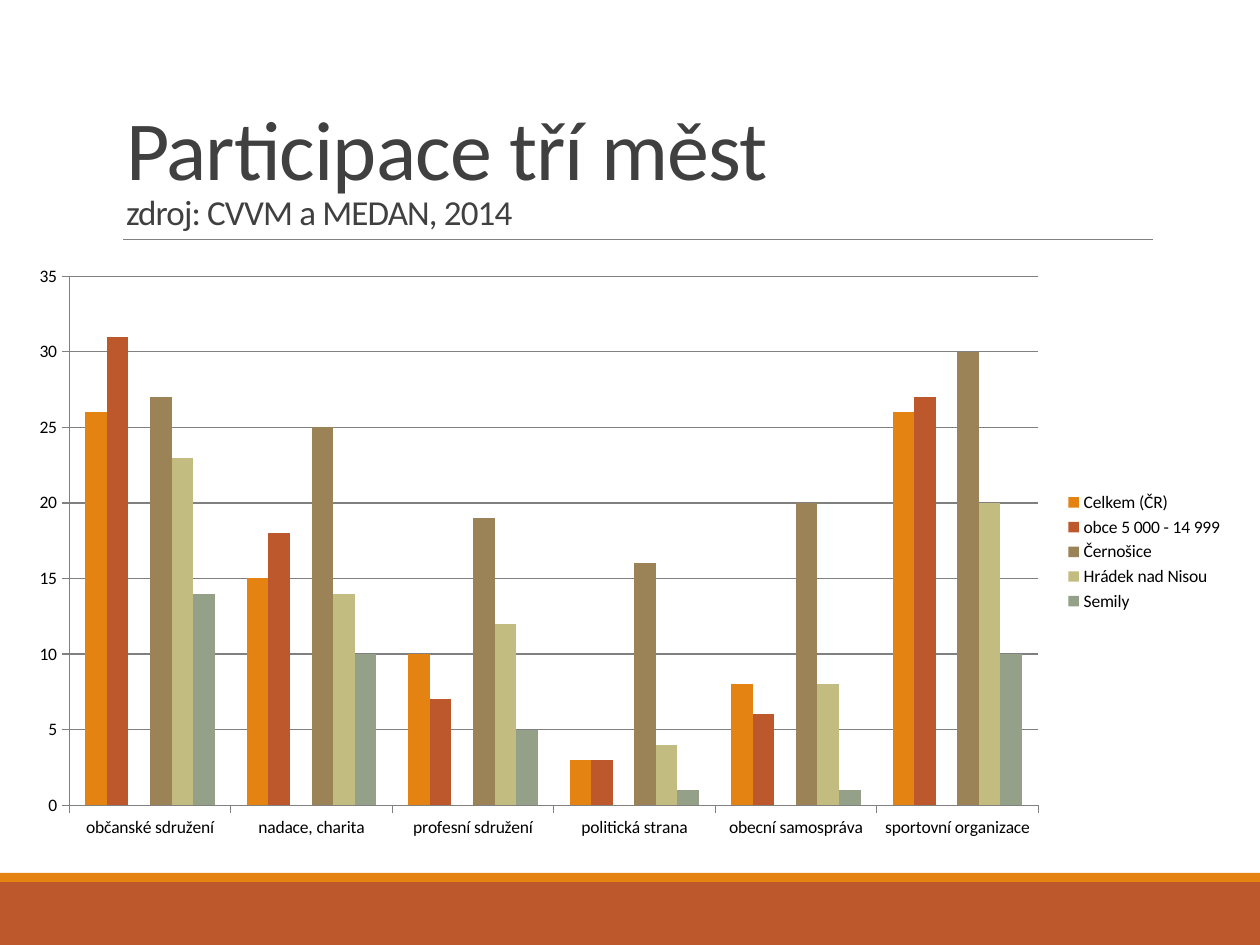
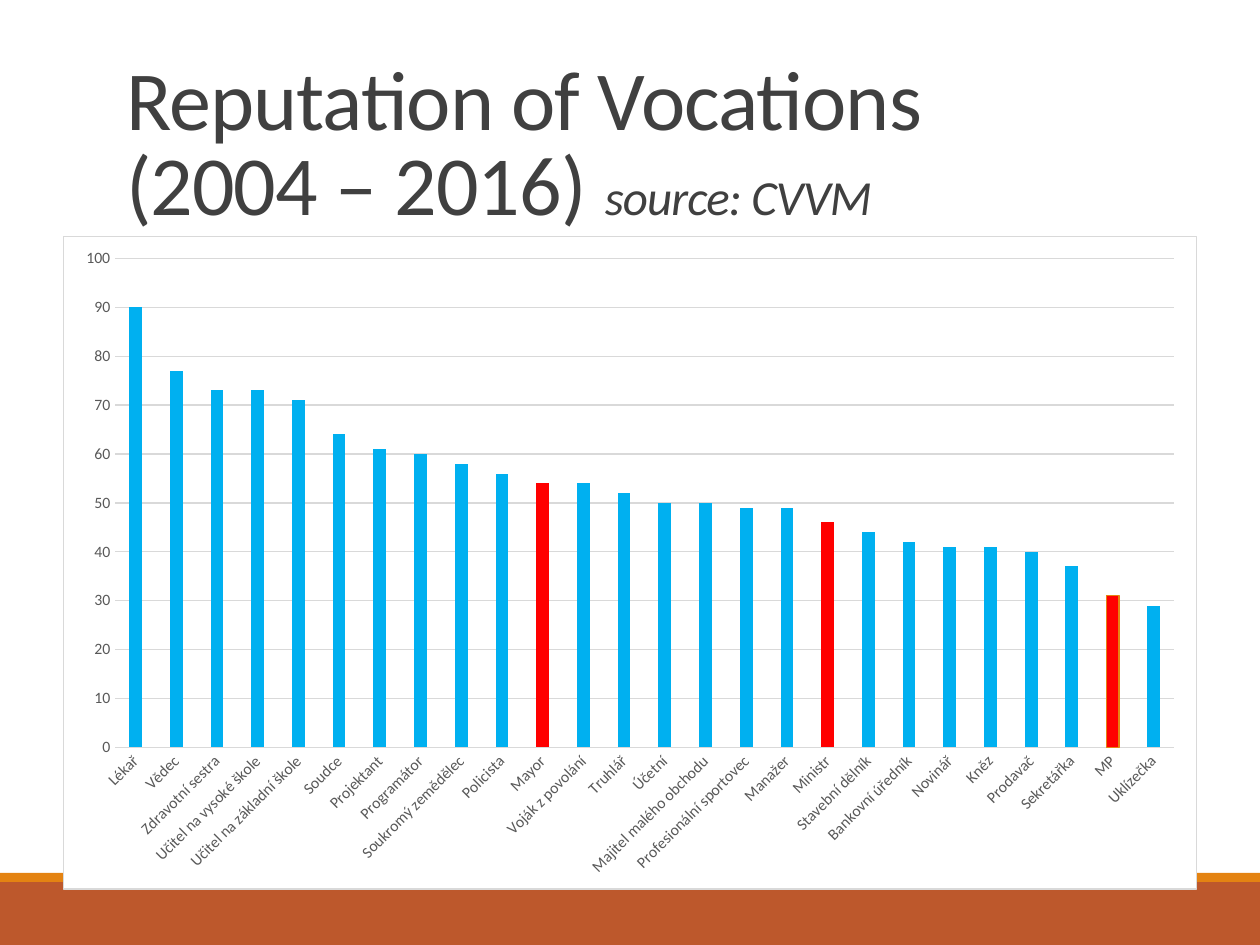
import lxml.etree
import pptx
import pptx.chart.data
import pptx.dml.color
import pptx.enum.chart
import pptx.enum.shapes
import pptx.enum.text
import pptx.oxml.ns
import pptx.util

Pt = pptx.util.Pt
qn = pptx.oxml.ns.qn
XL = pptx.enum.chart

FONT = "Calibri"
ORANGE, RUST = "E48312", "BD582C"
TITLE, RULE, GRID, LABEL = "404040", "808080", "D9D9D9", "595959"
SKY, RED, BLACK, WHITE = "00B0F0", "FF0000", "000000", "FFFFFF"


def rgb(color):
    return pptx.dml.color.RGBColor.from_string(color)


def paint(fmt, fill=None, line=None, width=0.75):
    if fill:
        fmt.fill.solid()
        fmt.fill.fore_color.rgb = rgb(fill)
    if line:
        fmt.line.color.rgb = rgb(line)
        fmt.line.width = Pt(width)
    else:
        fmt.line.fill.background()


prs = pptx.Presentation()
prs.slide_width, prs.slide_height = Pt(720), Pt(540)

titles = [
    [[("Participace tří měst", 48, False)],
     [("zdroj: CVVM a MEDAN, 2014", 20, False)]],
    [[("Reputation of Vocations", 48, False)],
     [("(2004 – 2016) ", 48, False), ("source: CVVM", 28, True)]],
]

participation = pptx.chart.data.CategoryChartData()
participation.categories = [
    "občanské sdružení", "nadace, charita", "profesní sdružení",
    "politická strana", "obecní samospráva", "sportovní organizace"]
cities = [
    ("Celkem (ČR)", [26, 15, 10, 3, 8, 26], ORANGE),
    ("obce 5 000 - 14 999", [31, 18, 7, 3, 6, 27], RUST),
    ("Series 3", [None] * 6, "865640"),
    ("Černošice", [27, 25, 19, 16, 20, 30], "9B8357"),
    ("Hrádek nad Nisou", [23, 14, 12, 4, 8, 20], "C2BC80"),
    ("Semily", [14, 10, 5, 1, 1, 10], "94A088"),
]
for name, values, color in cities:
    participation.add_series(name, values)

vocations = [
    ("Lékař", 90), ("Vědec", 77), ("Zdravotní sestra", 73),
    ("Učitel na vysoké škole", 73), ("Učitel na základní škole", 71),
    ("Soudce", 64), ("Projektant", 61), ("Programátor", 60),
    ("Soukromý zemědělec", 58), ("Policista", 56), ("Mayor", 54),
    ("Voják z povolání", 54), ("Truhlář", 52), ("Účetní", 50),
    ("Majitel malého obchodu", 50), ("Profesionální sportovec", 49),
    ("Manažer", 49), ("Ministr", 46), ("Stavební dělník", 44),
    ("Bankovní úředník", 42), ("Novinář", 41), ("Kněz", 41),
    ("Prodavač", 40), ("Sekretářka", 37), ("MP", 31), ("Uklízečka", 29)]
reputation = pptx.chart.data.CategoryChartData()
reputation.categories = [name for name, value in vocations]
reputation.add_series("Series 1", [value for name, value in vocations])

chart_specs = [
    dict(data=participation, box=(8.64, 145.44, 697.68, 339.84),
         colors=[color for name, values, color in cities],
         gap=150, overlap=0, top=35, step=5, size=10, text=BLACK,
         grid=RULE, axis=RULE, value_line=RULE, tick=XL.XL_TICK_MARK.OUTSIDE),
    dict(data=reputation, box=(36, 134.64, 648, 373.68), colors=[SKY],
         gap=219, overlap=-27, top=100, step=10, size=9, text=LABEL,
         grid=GRID, axis=GRID, value_line=None, tick=XL.XL_TICK_MARK.NONE),
]

charts = []
for lines, c in zip(titles, chart_specs):
    s = prs.slides.add_slide(prs.slide_layouts[5])

    for top, height, color in [(504, 36, RUST), (498.8, 5.2, ORANGE)]:
        sp = s.shapes.add_shape(pptx.enum.shapes.MSO_SHAPE.RECTANGLE,
                                0, Pt(top), prs.slide_width, Pt(height))
        sp.shadow.inherit = False
        paint(sp, color)
    rule = s.shapes.add_connector(pptx.enum.shapes.MSO_CONNECTOR.STRAIGHT,
                                  Pt(70.5), Pt(136.8), Pt(658.8), Pt(136.8))
    rule.line.color.rgb = rgb(RULE)
    rule.line.width = Pt(0.5)
    lxml.etree.SubElement(rule._element.spPr, qn("a:effectLst"))

    title = s.shapes.title
    title.left, title.top = Pt(64.8), Pt(22.3)
    title.width, title.height = Pt(594), Pt(114.5)
    tf = title.text_frame
    tf.auto_size = pptx.enum.text.MSO_AUTO_SIZE.NONE
    tf.word_wrap = True
    tf.vertical_anchor = pptx.enum.text.MSO_ANCHOR.BOTTOM
    p = tf.paragraphs[0]
    p.alignment = pptx.enum.text.PP_ALIGN.LEFT
    p.line_spacing = 0.85
    for i, line in enumerate(lines):
        if i:
            p.add_line_break()
        for text, size, italic in line:
            r = p.add_run()
            r.text = text
            r.font.name, r.font.size = FONT, Pt(size)
            r.font.color.rgb = rgb(TITLE)
            if italic:
                r.font.italic = True
            r._r.get_or_add_rPr().set("spc", "-50")

    chart = s.shapes.add_chart(XL.XL_CHART_TYPE.COLUMN_CLUSTERED,
                               *[Pt(v) for v in c["box"]], c["data"]).chart
    charts.append(chart)
    chart.has_title = chart.has_legend = False
    chart.font.name, chart.font.size = FONT, Pt(10)
    chart.font.color.rgb = rgb(BLACK)

    plot = chart.plots[0]
    plot.vary_by_categories = False
    plot.gap_width, plot.overlap = c["gap"], c["overlap"]
    for series, color in zip(plot.series, c["colors"]):
        series.invert_if_negative = False
        paint(series.format, color)

    cat, val = chart.category_axis, chart.value_axis
    for axis, color in [(cat, c["axis"]), (val, c["value_line"])]:
        axis.major_tick_mark = c["tick"]
        axis.minor_tick_mark = XL.XL_TICK_MARK.NONE
        font = axis.tick_labels.font
        font.name, font.size = FONT, Pt(c["size"])
        font.color.rgb = rgb(c["text"])
        paint(axis.format, line=color)
    val.minimum_scale, val.maximum_scale = 0, c["top"]
    val.major_unit = c["step"]
    val.tick_labels.number_format = "0"
    val.tick_labels.number_format_is_linked = False
    val.has_major_gridlines = True
    paint(val.major_gridlines.format, line=c["grid"])

city_chart, vocation_chart = charts

city_chart.has_legend = True
legend = city_chart.legend
legend.position = XL.XL_LEGEND_POSITION.RIGHT
legend.include_in_layout = False
entry = lxml.etree.Element(qn("c:legendEntry"))
lxml.etree.SubElement(entry, qn("c:idx")).set("val", "2")
lxml.etree.SubElement(entry, qn("c:delete")).set("val", "1")
legend._element.find(qn("c:legendPos")).addnext(entry)

points = vocation_chart.plots[0].series[0].points
for i, (name, value) in enumerate(vocations):
    if name in ("Mayor", "Ministr", "MP"):
        paint(points[i].format, RED, ORANGE if name == "MP" else None)

labels = vocation_chart.category_axis._element.find(qn("c:txPr"))
labels.find(qn("a:bodyPr")).set("rot", "-2700000")

frame = lxml.etree.Element(qn("c:spPr"))
fill = lxml.etree.SubElement(frame, qn("a:solidFill"))
lxml.etree.SubElement(fill, qn("a:srgbClr")).set("val", WHITE)
border = lxml.etree.SubElement(frame, qn("a:ln"), w=str(Pt(0.75)))
fill = lxml.etree.SubElement(border, qn("a:solidFill"))
lxml.etree.SubElement(fill, qn("a:srgbClr")).set("val", GRID)
vocation_chart._chartSpace.find(qn("c:chart")).addnext(frame)

prs.save("out.pptx")
